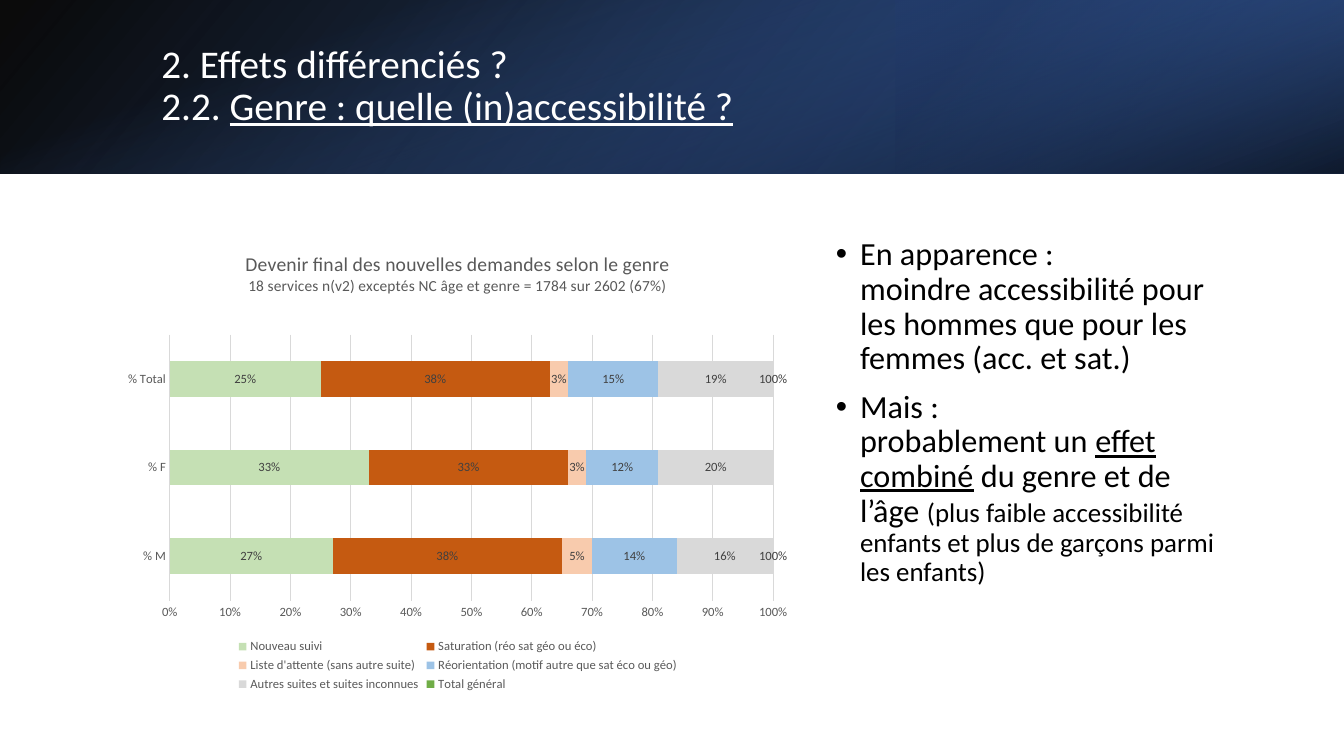
from lxml import etree
from pptx import Presentation, util as u
from pptx.chart.data import CategoryChartData
from pptx.dml.color import RGBColor
from pptx.enum import chart as ch, shapes, text
from pptx.oxml import parse_xml
from pptx.oxml.ns import nsdecls, qn

W, H = 13.33, 7.5
FONT = "Calibri"
BAND = 1.72
BANNER = [
    ((0, 0, W, BAND), 0, True, 140, [(0, "000000", 96), (100, "2F5597", 100)]),
    ((W * 2 / 3, 0, W / 3, BAND), 180, True, 320, [(19, "203864", 68), (100, "4472C4", 79)]),
    (((W - BAND) / 2, (BAND - W) / 2, BAND, W), 90, False, 340, [(23, "4472C4", 0), (99, "000000", 74)]),
]
TITLE = [("2. Effets différenciés ?\n2.2. ", 28, False),
         ("Genre : quelle (in)accessibilité ?", 28, True)]
POINTS = [
    [("En apparence :\nmoindre accessibilité pour les hommes que pour les femmes (acc. et sat.)", 23, False)],
    [("Mais :\nprobablement un ", 23, False), ("effet combiné", 23, True),
     (" du genre et de l’âge ", 23, False),
     ("(plus faible accessibilité enfants et plus de garçons parmi les enfants)", 19.2, False)],
]
CHART_TITLE = [("Devenir final des nouvelles demandes selon le genre", 14),
               ("18 services n(v2) exceptés NC âge et genre = 1784 sur 2602 (67%)", 11)]
GENDERS = ["% M", "% F", "% Total"]
OUTCOMES = [
    ("Nouveau suivi", (0.27, 0.33, 0.25), "C5E0B4"),
    ("Saturation (réo sat géo ou éco)", (0.38, 0.33, 0.38), "C55A11"),
    ("Liste d'attente (sans autre suite)", (0.05, 0.03, 0.03), "F8CBAD"),
    ("Réorientation (motif autre que sat éco ou géo)", (0.14, 0.12, 0.15), "9DC3E6"),
    ("Autres suites et suites inconnues", (0.16, 0.2, 0.19), "D9D9D9"),
    ("Total général", (1, 1, 1), "70AD47"),
]
PLOT = {"x": 0.08, "y": 0.22, "w": 0.88, "h": 0.575}


def rgb(code):
    return RGBColor.from_string(code)


def inches(*lengths):
    return [u.Inches(length) for length in lengths]


def style(font, size, color):
    font.name, font.size, font.color.rgb = FONT, u.Pt(size), rgb(color)


def add_band(slide, box, turn, flipped, angle, stops):
    band = slide.shapes.add_shape(shapes.MSO_SHAPE.RECTANGLE, *inches(*box))
    band.shadow.inherit = False
    band.line.fill.background()
    band.rotation = turn
    if flipped:
        band.element.spPr.xfrm.set("flipH", "1")
    band.fill.gradient()
    band.fill.gradient_angle = 360 - angle
    for stop, (place, color, opacity) in zip(band.fill.gradient_stops, stops):
        stop.position = place / 100
        stop.color.rgb = rgb(color)
    for tone, (_, _, opacity) in zip(band.element.spPr.iter(qn("a:srgbClr")), stops):
        etree.SubElement(tone, qn("a:alpha")).set("val", str(opacity * 1000))


def place(holder, box):
    holder.left, holder.top, holder.width, holder.height = inches(*box)
    frame = holder.text_frame
    frame.word_wrap, frame.auto_size = True, text.MSO_AUTO_SIZE.NONE
    return frame


def write(paragraph, runs, color):
    paragraph.alignment = text.PP_ALIGN.LEFT
    paragraph.line_spacing = 0.9
    paragraph.space_before = u.Pt(0)
    style(paragraph.font, runs[0][1], color)
    for words, size, underlined in runs:
        for i, line in enumerate(words.split("\n")):
            if i:
                paragraph.add_line_break()
            run = paragraph.add_run()
            run.text = line
            style(run.font, size, color)
            if underlined:
                run.font.underline = True


def add_outcomes(slide, box):
    data = CategoryChartData(number_format="0%")
    data.categories = GENDERS
    for name, shares, _ in OUTCOMES:
        data.add_series(name, shares)
    chart = slide.shapes.add_chart(ch.XL_CHART_TYPE.BAR_STACKED, *inches(*box), data).chart
    style(chart.font, 10, "000000")

    heading = chart.chart_title.text_frame
    for i, (words, size) in enumerate(CHART_TITLE):
        line = heading.add_paragraph() if i else heading.paragraphs[0]
        line.text = words
        style(line.font, size, "595959")
        line.font.bold = False
    chart.chart_title.include_in_layout = False

    chart.has_legend = True
    chart.legend.position = ch.XL_LEGEND_POSITION.BOTTOM
    chart.legend.include_in_layout = False
    style(chart.legend.font, 9, "595959")

    genders, shares = chart.category_axis, chart.value_axis
    for axis in (genders, shares):
        axis.major_tick_mark = axis.minor_tick_mark = ch.XL_TICK_MARK.NONE
        style(axis.tick_labels.font, 9, "595959")
    shares.minimum_scale, shares.maximum_scale, shares.major_unit = 0, 1, 0.1
    shares.tick_labels.number_format = "0%"
    shares.tick_labels.number_format_is_linked = False
    shares.format.line.fill.background()
    for line in (genders.format.line, shares.major_gridlines.format.line):
        line.color.rgb, line.width = rgb("D9D9D9"), u.Pt(0.75)

    plot = chart.plots[0]
    plot.gap_width, plot.overlap, plot.vary_by_categories = 150, 100, False
    for series, (_, _, color) in zip(plot.series, OUTCOMES):
        series.format.fill.solid()
        series.format.fill.fore_color.rgb = rgb(color)
        labels = series.data_labels
        labels.show_value, labels.position = True, ch.XL_LABEL_POSITION.CENTER
        labels.number_format, labels.number_format_is_linked = "0%", False
        style(labels.font, 9, "404040")

    area = chart.element.find(".//" + qn("c:plotArea"))
    for layout in area.findall(qn("c:layout")):
        area.remove(layout)
    modes = '<c:layoutTarget val="inner"/><c:xMode val="edge"/><c:yMode val="edge"/>'
    sizes = "".join(f'<c:{key} val="{share}"/>' for key, share in PLOT.items())
    area.insert(0, parse_xml(
        f'<c:layout {nsdecls("c")}><c:manualLayout>{modes}{sizes}</c:manualLayout></c:layout>'))


def main():
    """Build the slide on outcomes by gender."""
    deck = Presentation()
    deck.slide_width, deck.slide_height = inches(W, H)
    slide = deck.slides.add_slide(deck.slide_layouts[1])
    title, body = slide.placeholders
    for band in BANNER:
        add_band(slide, *band)
    for holder in (title, body):
        slide.shapes.element.append(holder.element)

    heading = place(title, (1.5, 0.38, 10.98, 0.96))
    heading.vertical_anchor = text.MSO_ANCHOR.MIDDLE
    write(heading.paragraphs[0], TITLE, "FFFFFF")

    points = place(body, (8.19, 2.31, 4.03, 4.59))
    points.vertical_anchor = text.MSO_ANCHOR.TOP
    for i, runs in enumerate(POINTS):
        point = points.add_paragraph() if i else points.paragraphs[0]
        settings = point._p.get_or_add_pPr()
        settings.set("marL", str(u.Inches(0.24)))
        settings.set("indent", str(u.Inches(-0.24)))
        etree.SubElement(settings, qn("a:buFont")).set("typeface", "Arial")
        etree.SubElement(settings, qn("a:buChar")).set("char", "•")
        write(point, runs, "000000")
        if i:
            point.space_before = u.Pt(9.6)

    add_outcomes(slide, (1.14, 2.31, 6.8, 4.59))
    deck.save("out.pptx")


if __name__ == "__main__":
    main()
